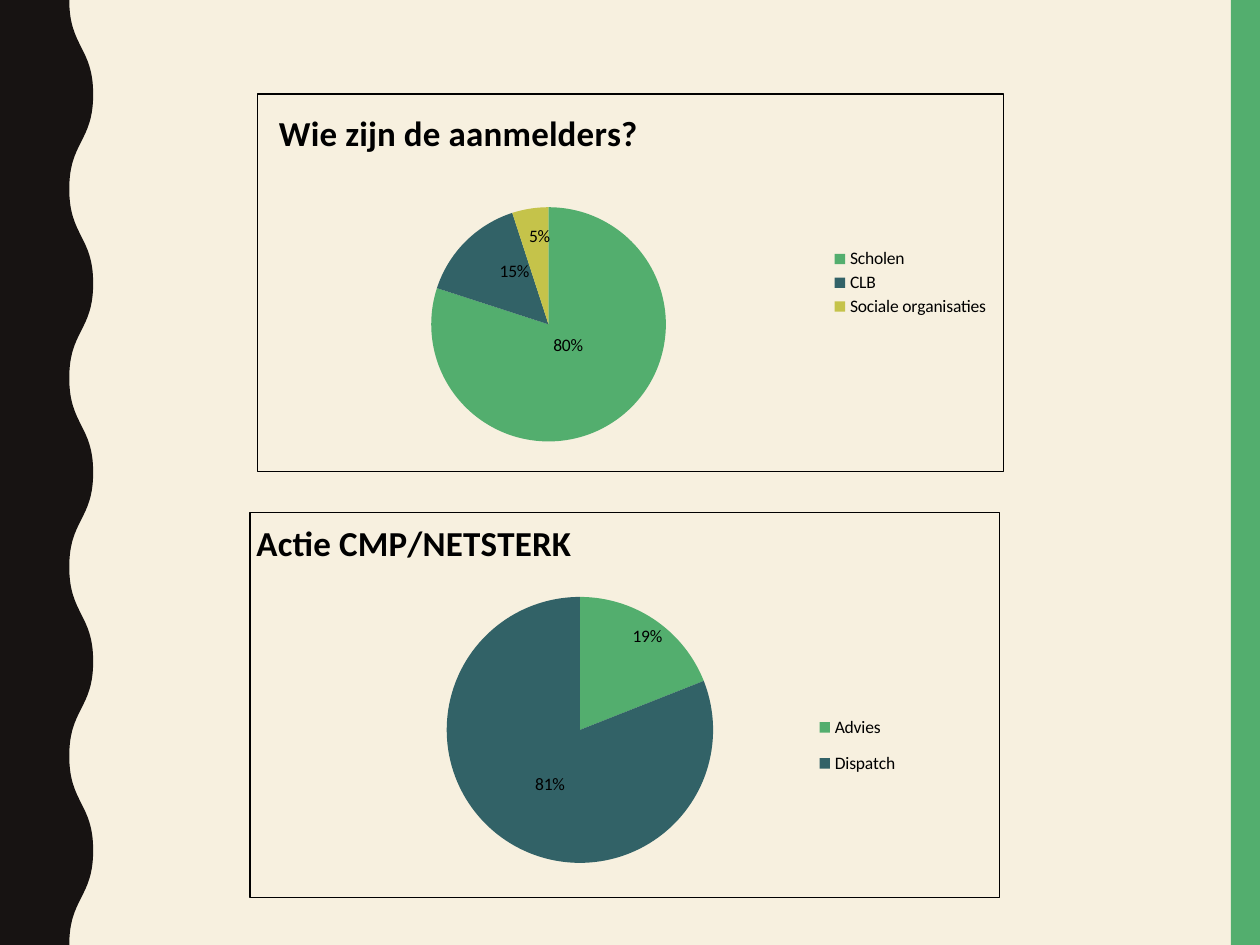
from pptx import Presentation
from pptx.chart.data import CategoryChartData
from pptx.dml.color import RGBColor
from pptx.enum.chart import XL_CHART_TYPE as ChartType
from pptx.enum.chart import XL_LABEL_POSITION as LabelPosition
from pptx.enum.chart import XL_LEGEND_POSITION as LegendPosition
from pptx.enum.shapes import MSO_SHAPE as Shape
from pptx.oxml import parse_xml
from pptx.oxml.ns import nsdecls
from pptx.util import Inches, Pt

COLORS = {
    "background": "F7F0DF",
    "wave": "171312",
    "green": "53AE6E",
    "teal": "326267",
    "olive": "C5C34A",
    "black": "000000",
}
SLICES = ("green", "teal", "olive")
WIDTH, HEIGHT = 10, 7.5

# Places inside a chart are fractions of its frame; label shifts start at the
# centre of the slice.
CHARTS = [
    {
        "box": (2.04, 0.74, 5.93, 3.01),
        "title": "Wie zijn de aanmelders?",
        "slices": {"Scholen": 80, "CLB": 15, "Sociale organisaties": 5},
        "title_at": (0.02, 0.02),
        "pie_at": (0.23, 0.3, 0.32, 0.62),
        "legend_at": (0.77, 0.4, 0.21, 0.2),
        "shifts": [(-0.02, -0.07), (0.01, -0.03), (0, -0.08)],
    },
    {
        "box": (1.98, 4.06, 5.96, 3.07),
        "title": "Actie CMP/NETSTERK",
        "slices": {"Advies": 19, "Dispatch": 81},
        "title_at": (0, -0.01),
        "pie_at": (0.26, 0.22, 0.36, 0.69),
        "legend_at": (0.75, 0.49, 0.12, 0.23),
        "shifts": [(0.04, -0.1), (0.01, 0)],
    },
]


def rgb(name):
    return RGBColor.from_string(COLORS[name])


def paint(shape, color):
    shape.shadow.inherit = False
    shape.fill.solid()
    shape.fill.fore_color.rgb = rgb(color)
    shape.line.fill.background()


def set_font(font, **values):
    for name, value in values.items():
        setattr(font, name, value)
    font.color.rgb = rgb("black")


def place(element, index, values, edge=True, inner=False):
    """Give a chart part a manual layout, as child number index."""
    for old in element.xpath("./c:layout"):
        element.remove(old)
    parts = '<c:layoutTarget val="inner"/>' if inner else ""
    if edge:
        parts += '<c:xMode val="edge"/><c:yMode val="edge"/>'
    parts += "".join(f'<c:{key} val="{value}"/>' for key, value in zip("xywh", values))
    element.insert(index, parse_xml(
        f'<c:layout {nsdecls("c")}><c:manualLayout>{parts}</c:manualLayout></c:layout>'))


def add_wave(slide, inner, outer, height, halves=10):
    """Draw the left band, whose edge swings between inner and outer."""
    step = height / halves
    edge = [(Inches((inner, outer)[number % 2]), Inches(step * number))
            for number in range(halves + 1)]
    builder = slide.shapes.build_freeform(0, 0)
    builder.add_line_segments([*edge, (0, Inches(height))])
    wave = builder.convert_to_shape()
    paint(wave, "wave")

    # Bend each straight step of the edge into an S-curve.
    lines = wave.element.xpath(".//a:lnTo")[1:halves + 1]
    for line, (x1, y1), (x2, y2) in zip(lines, edge, edge[1:]):
        middle = (y1 + y2) // 2
        points = "".join(f'<a:pt x="{x}" y="{y}"/>'
                         for x, y in ((x1, middle), (x2, middle), (x2, y2)))
        curve = parse_xml(f'<a:cubicBezTo {nsdecls("a")}>{points}</a:cubicBezTo>')
        line.getparent().replace(line, curve)


def add_pie(slide, box, title, slices, title_at, pie_at, legend_at, shifts):
    data = CategoryChartData()
    data.categories = list(slices)
    data.add_series("Series 1", list(slices.values()))
    chart = slide.shapes.add_chart(ChartType.PIE, *map(Inches, box), data).chart
    set_font(chart.font, name="Calibri", size=Pt(10))

    chart.has_title = True
    chart.chart_title.include_in_layout = False
    frame = chart.chart_title.text_frame
    frame.text = title
    set_font(frame.paragraphs[0].runs[0].font, name="Calibri", size=Pt(20), bold=True)

    chart.has_legend = True
    chart.legend.position = LegendPosition.RIGHT
    chart.legend.include_in_layout = False

    plot = chart.plots[0]
    plot.vary_by_categories = True
    plot.has_data_labels = True
    labels = plot.data_labels
    labels.show_percentage, labels.show_value = True, False
    for index, color in enumerate(SLICES[:len(slices)]):
        point = plot.series[0].points[index]
        point.format.fill.solid()
        point.format.fill.fore_color.rgb = rgb(color)
        point.data_label.position = LabelPosition.CENTER

    root = chart.element
    for label, shift in zip(root.xpath(".//c:dLbl"), shifts):
        label.xpath("./c:showVal")[0].set("val", "0")
        label.xpath("./c:showPercent")[0].set("val", "1")
        place(label, 1, shift, edge=False)
    place(root.xpath("./c:chart/c:title")[0], 1, title_at)
    place(root.xpath(".//c:plotArea")[0], 0, pie_at, inner=True)
    place(root.xpath(".//c:legend")[0], 1, legend_at)
    root.xpath("./c:txPr")[0].addprevious(parse_xml(
        f'<c:spPr {nsdecls("c", "a")}><a:noFill/><a:ln w="{Pt(0.75)}"><a:solidFill>'
        f'<a:srgbClr val="{COLORS["black"]}"/></a:solidFill></a:ln></c:spPr>'))


def main():
    deck = Presentation()
    deck.slide_width, deck.slide_height = Inches(WIDTH), Inches(HEIGHT)
    slide = deck.slides.add_slide(deck.slide_layouts[6])
    slide.background.fill.solid()
    slide.background.fill.fore_color.rgb = rgb("background")

    band = 0.23
    stripe = slide.shapes.add_shape(
        Shape.RECTANGLE, Inches(WIDTH - band), 0, Inches(band), Inches(HEIGHT))
    paint(stripe, "green")
    add_wave(slide, 0.55, 0.74, HEIGHT)
    for chart in CHARTS:
        add_pie(slide, **chart)
    deck.save("out.pptx")


if __name__ == "__main__":
    main()
